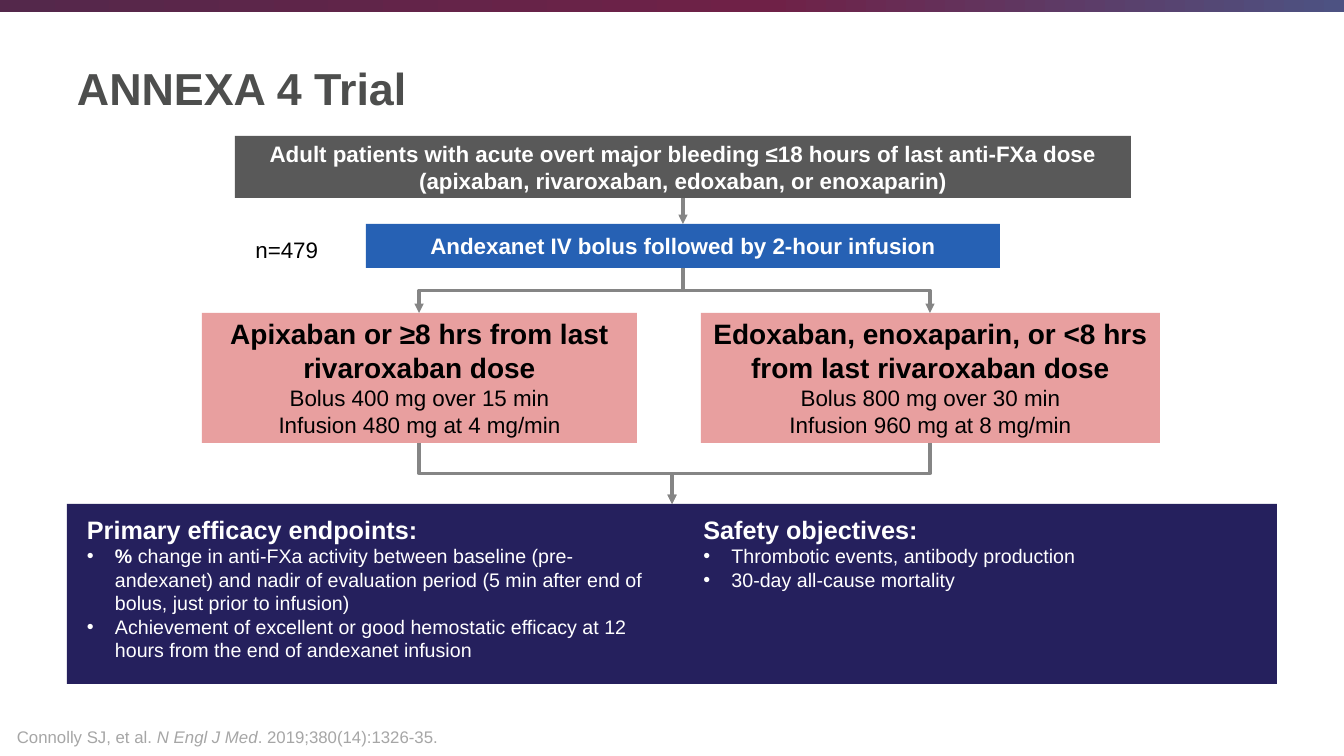
from dataclasses import dataclass

import lxml.etree
import pptx
import pptx.dml.color
import pptx.enum.shapes
import pptx.enum.text
import pptx.oxml
import pptx.oxml.ns
import pptx.util

SCALE = 12192000 / 1344
FONT = "Arial"
COLOURS = {
    "title": "4D4E4D", "population": "595959", "treatment": "2661B4",
    "arm": "E89F9F", "endpoints": "25205D", "arrow": "858585",
    "white": "FFFFFF", "black": "000000", "citation": "A6A6A6",
}
BANNER_STOPS = [(0, "54284B"), (57, "6F2147"), (100, "4D5282")]
ALIGN = pptx.enum.text.PP_ALIGN
ANCHOR = pptx.enum.text.MSO_ANCHOR
RECTANGLE = pptx.enum.shapes.MSO_SHAPE.RECTANGLE
CONNECTOR = pptx.enum.shapes.MSO_CONNECTOR
qn = pptx.oxml.ns.qn


@dataclass
class Box:
    """A rectangle in px."""
    left: int
    top: int
    width: int
    height: int

    @property
    def middle(self):
        """Return the horizontal centre."""
        return self.left + self.width // 2

    @property
    def bottom(self):
        """Return the lower edge."""
        return self.top + self.height

    def emu(self):
        """Return left, top, width and height in EMU."""
        return [px(n) for n in (self.left, self.top, self.width, self.height)]


def px(length):
    """Turn px into EMU."""
    return pptx.util.Emu(round(length * SCALE))


def rgb(name):
    """Look up a named colour."""
    return pptx.dml.color.RGBColor.from_string(COLOURS[name])


def set_insets(frame, left, top, right, bottom):
    """Set the inner margins of a text frame in px."""
    frame.margin_left, frame.margin_top = px(left), px(top)
    frame.margin_right, frame.margin_bottom = px(right), px(bottom)


def add_panel(slide, box, colour):
    """Add a plain filled rectangle and return it."""
    panel = slide.shapes.add_shape(RECTANGLE, *box.emu())
    panel.shadow.inherit = False
    panel.fill.solid()
    panel.fill.fore_color.rgb = rgb(colour)
    panel.line.fill.background()
    panel.text_frame.word_wrap = True
    panel.text_frame.vertical_anchor = ANCHOR.MIDDLE
    set_insets(panel.text_frame, 7, 4, 7, 4)
    return panel


def add_label(slide, box, anchor=ANCHOR.TOP):
    """Add a wrapping text box and return its frame."""
    frame = slide.shapes.add_textbox(*box.emu()).text_frame
    frame.word_wrap = True
    frame.vertical_anchor = anchor
    return frame


def write(frame, text, size, colour, bold=False, align=ALIGN.LEFT, bullet=False):
    """Append one paragraph and return it."""
    paragraph = frame.paragraphs[0]
    if paragraph.runs:
        paragraph = frame.add_paragraph()
    paragraph.alignment = align
    if bullet:
        properties = paragraph._p.get_or_add_pPr()
        properties.set("marL", str(px(28)))
        properties.set("indent", str(-px(28)))
        lxml.etree.SubElement(properties, qn("a:buFont"), typeface=FONT)
        lxml.etree.SubElement(properties, qn("a:buChar"), char="•")
    paragraph.font.name = FONT
    paragraph.font.size = pptx.util.Pt(size)
    paragraph.font.color.rgb = rgb(colour)
    if bold is not None:
        paragraph.font.bold = bold
    paragraph.add_run().text = text
    return paragraph


def add_banner(slide, box):
    """Draw the gradient strip along the top."""
    banner = add_panel(slide, box, "title")
    banner.fill.gradient()
    banner.fill.gradient_angle = 0
    stops = banner._element.spPr.find(".//" + qn("a:gsLst"))
    for stop in list(stops):
        stops.remove(stop)
    for percent, colour in BANNER_STOPS:
        stop = lxml.etree.SubElement(stops, qn("a:gs"), pos=str(percent * 1000))
        lxml.etree.SubElement(stop, qn("a:srgbClr"), val=colour)


def add_step(slide, box, text, colour):
    """Draw a one-message step of the trial flow."""
    frame = add_panel(slide, box, colour).text_frame
    write(frame, text, 16, "white", True, ALIGN.CENTER)


def add_arm(slide, box, patients, doses):
    """Draw a dosing arm with its patients and doses."""
    frame = add_panel(slide, box, "arm").text_frame
    frame.vertical_anchor = ANCHOR.TOP
    write(frame, patients, 20, "black", True, ALIGN.CENTER)
    for dose in doses:
        write(frame, dose, 16, "black", align=ALIGN.CENTER)


def add_endpoints(slide, box):
    """Draw the two-column panel of endpoints and objectives."""
    frame = add_panel(slide, box, "endpoints").text_frame
    frame.vertical_anchor = ANCHOR.TOP
    set_insets(frame, 20, 10, 7, 4)
    columns = frame._txBody.find(qn("a:bodyPr"))
    columns.set("numCol", "2")
    columns.set("spcCol", str(px(50)))
    write(frame, "Primary efficacy endpoints:", 18, "white", True)
    change = write(frame, "% ", 14, "white", None, bullet=True)
    change.runs[0].font.bold = True
    detail = change.add_run()
    detail.text = ("change in anti-FXa activity between baseline (pre-andexanet) and nadir "
                   "of evaluation period (5 min after end of bolus, just prior to infusion)")
    detail.font.bold = False
    write(frame, "Achievement of excellent or good hemostatic efficacy at 12 hours "
          "from the end of andexanet infusion", 14, "white", bullet=True)
    write(frame, "Safety objectives:", 18, "white", True)
    for objective in ("Thrombotic events, antibody production", "30-day all-cause mortality"):
        write(frame, objective, 14, "white", bullet=True)


def add_arrow(slide, x1, y1, x2, y2):
    """Draw a downward arrow, bent halfway when its ends are not aligned."""
    if x1 == x2:
        arrow = slide.shapes.add_connector(
            CONNECTOR.STRAIGHT, px(x1), px(y1), px(x2), px(y2))
    else:
        x, y = (x1 + x2) / 2, (y1 + y2) / 2
        side = 1 if x2 < x1 else -1
        half_drop, half_span = side * (y2 - y1) / 2, abs(x2 - x1) / 2
        arrow = slide.shapes.add_connector(
            CONNECTOR.ELBOW, px(x - half_drop), px(y - half_span),
            px(x + half_drop), px(y + half_span))
        turn = 90 if side == 1 else 270
        arrow._element.spPr.find(qn("a:xfrm")).set("rot", str(turn * 60000))
    arrow.line.color.rgb = rgb("arrow")
    arrow.line.width = pptx.util.Pt(2.25)
    lxml.etree.SubElement(arrow.line._get_or_add_ln(), qn("a:tailEnd"), type="triangle")
    lxml.etree.SubElement(arrow._element.spPr, qn("a:effectLst"))


def add_flow(slide, box):
    """Draw the trial flow from population to endpoints."""
    population = Box(box.left + 168, box.top, 896, 62)
    treatment = Box(box.left + 299, box.top + 88, 634, 44)
    arms = [Box(box.left + 135, box.top + 177, 435, 130),
            Box(box.left + 634, box.top + 177, 459, 130)]
    endpoints = Box(box.left, box.bottom - 180, box.width, 180)
    add_step(slide, population, "Adult patients with acute overt major bleeding ≤18 hours of last "
             "anti-FXa dose (apixaban, rivaroxaban, edoxaban, or enoxaparin)", "population")
    add_step(slide, treatment, "Andexanet IV bolus followed by 2-hour infusion", "treatment")
    add_arm(slide, arms[0], "Apixaban or ≥8 hrs from last rivaroxaban dose",
            ["Bolus 400 mg over 15 min", "Infusion 480 mg at 4 mg/min"])
    add_arm(slide, arms[1], "Edoxaban, enoxaparin, or <8 hrs from last rivaroxaban dose",
            ["Bolus 800 mg over 30 min", "Infusion 960 mg at 8 mg/min"])
    add_endpoints(slide, endpoints)
    add_arrow(slide, population.middle, population.bottom, treatment.middle, treatment.top)
    for arm in arms:
        add_arrow(slide, treatment.middle, treatment.bottom, arm.middle, arm.top)
        add_arrow(slide, arm.middle, arm.bottom, endpoints.middle, endpoints.top)
    enrolled = add_label(slide, Box(box.left + 123, box.top + 95, 138, 40))
    write(enrolled, "n=479", 16, "black", align=ALIGN.RIGHT)


def add_citation(slide, box):
    """Write the source of the trial."""
    citation = write(add_label(slide, box), "Connolly SJ, et al. ", 12, "citation")
    journal = citation.add_run()
    journal.text = "N Engl J Med"
    journal.font.italic = True
    citation.add_run().text = ". 2019;380(14):1326-35."


def main():
    """Build and save the slide."""
    deck = pptx.Presentation()
    deck.slide_width, deck.slide_height = px(1344), px(756)
    slide = deck.slides.add_slide(deck.slide_layouts[6])
    add_banner(slide, Box(0, 0, 1344, 12))
    title = add_label(slide, Box(67, 22, 1184, 131), ANCHOR.MIDDLE)
    write(title, "ANNEXA 4 Trial", 32, "title", True)
    add_flow(slide, Box(67, 136, 1210, 548))
    add_citation(slide, Box(7, 722, 627, 30))
    deck.save("out.pptx")


if __name__ == "__main__":
    main()
